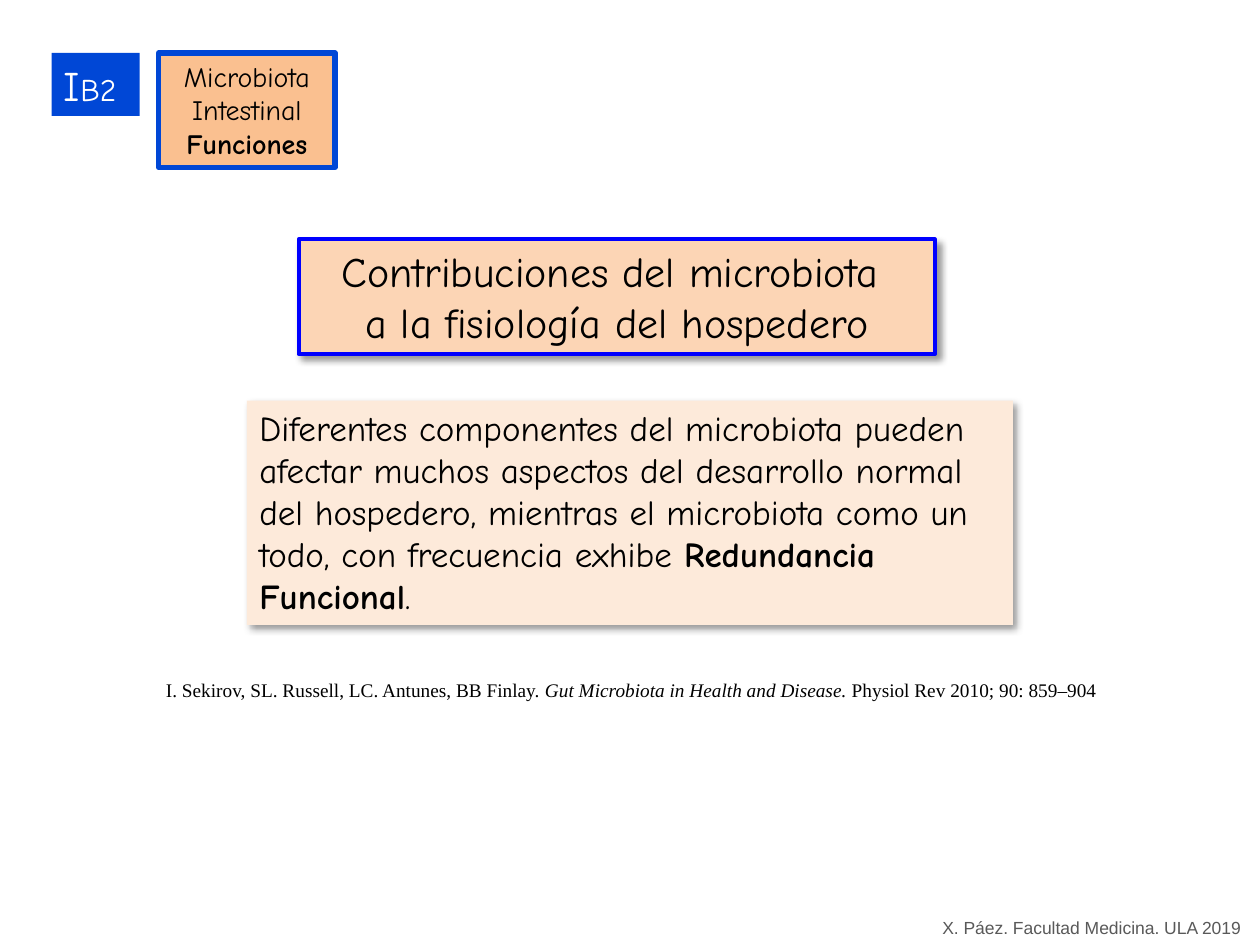
import pptx
import pptx.dml.color
import pptx.enum.shapes
import pptx.enum.text
import pptx.oxml
import pptx.oxml.ns
import pptx.util

COLUMNS, ROWS = 100, 75
BLUE = "0047D6"
CENTER = pptx.enum.text.PP_ALIGN.CENTER
LEFT = pptx.enum.text.PP_ALIGN.LEFT


def color(value):
    return pptx.dml.color.RGBColor.from_string(value)


class SlideBuilder:
    def __init__(self, presentation):
        self.column = presentation.slide_width / COLUMNS
        self.row = presentation.slide_height / ROWS
        self.slide = presentation.slides.add_slide(presentation.slide_layouts[6])

    def place(self, left, top, width, height):
        return (round(left * self.column), round(top * self.row),
                round(width * self.column), round(height * self.row))

    def set_text(self, shape, paragraphs, size, font="Comic Neue", ink="000000",
                 align=LEFT, wrap=True):
        frame = shape.text_frame
        frame.word_wrap = wrap
        frame.vertical_anchor = pptx.enum.text.MSO_ANCHOR.TOP
        for index, pieces in enumerate(paragraphs):
            paragraph = frame.add_paragraph() if index else frame.paragraphs[0]
            paragraph.alignment = align
            for text, changes in pieces:
                run = paragraph.add_run()
                run.text = text
                run.font.name = font
                run.font.size = pptx.util.Pt(changes.get("size", size))
                run.font.bold = changes.get("bold", False)
                run.font.italic = changes.get("italic", False)
                run.font.color.rgb = color(ink)

    def note(self, area, paragraphs, size, **style):
        box = self.slide.shapes.add_textbox(*self.place(*area))
        self.set_text(box, paragraphs, size, **style)

    def panel(self, area, paragraphs, size, fill, line=None, line_width=0,
              shadow=False, **style):
        panel = self.slide.shapes.add_shape(
            pptx.enum.shapes.MSO_SHAPE.RECTANGLE, *self.place(*area))
        panel.fill.solid()
        panel.fill.fore_color.rgb = color(fill)
        if line:
            panel.line.color.rgb = color(line)
            panel.line.width = pptx.util.Pt(line_width)
        else:
            panel.line.fill.background()
        panel.shadow.inherit = False
        if shadow:
            self.cast_shadow(panel)
        self.set_text(panel, paragraphs, size, **style)

    def cast_shadow(self, shape):
        effects = shape._element.spPr.find(pptx.oxml.ns.qn("a:effectLst"))
        effects.append(pptx.oxml.parse_xml(
            f'<a:outerShdw {pptx.oxml.ns.nsdecls("a")} blurRad="{pptx.util.Pt(4)}" '
            f'dist="{pptx.util.Pt(3)}" dir="2700000" algn="tl" rotWithShape="0">'
            '<a:srgbClr val="000000"><a:alpha val="40000"/></a:srgbClr>'
            '</a:outerShdw>'))


def main():
    presentation = pptx.Presentation()
    presentation.slide_width = pptx.util.Inches(10)
    presentation.slide_height = pptx.util.Inches(7.5)
    builder = SlideBuilder(presentation)

    builder.note((73.8, 72.3, 25.9, 2.7),
                 [[("X. Páez. Facultad Medicina. ULA 2019", {})]],
                 10, font="Arial", ink="595959", wrap=False)
    builder.note((10.1, 53.3, 80, 2.9),
                 [[("I. Sekirov, SL. Russell, LC. Antunes, BB Finlay. ", {}),
                   ("Gut Microbiota in Health and Disease. ", {"italic": True}),
                   ("Physiol Rev 2010; 90: 859–904", {})]],
                 11, font="Times New Roman", align=CENTER)
    builder.panel((23.7, 19, 50.5, 9.1),
                  [[("Contribuciones del microbiota ", {})],
                   [("a la fisiología del hospedero", {})]],
                  24, "FCD5B5", "0000FF", 2.25, shadow=True, align=CENTER)
    builder.panel((19.6, 31.8, 60.8, 17.8),
                  [[("Diferentes componentes del microbiota pueden afectar muchos "
                     "aspectos del desarrollo normal del hospedero, mientras el "
                     "microbiota como un todo, con frecuencia exhibe ", {}),
                    ("Redundancia Funcional", {"bold": True}),
                    (".", {})]],
                  20, "FDEADA", shadow=True)
    builder.panel((4.1, 4.2, 7, 5),
                  [[("I", {}), ("B2", {"size": 18})]],
                  24, BLUE, ink="FFFFFF", wrap=False)
    builder.panel((12.6, 4.2, 14, 9.1),
                  [[("Microbiota Intestinal", {})],
                   [("Funciones", {"bold": True})]],
                  16, "FAC090", BLUE, 3, align=CENTER)

    presentation.save("out.pptx")


if __name__ == "__main__":
    main()
